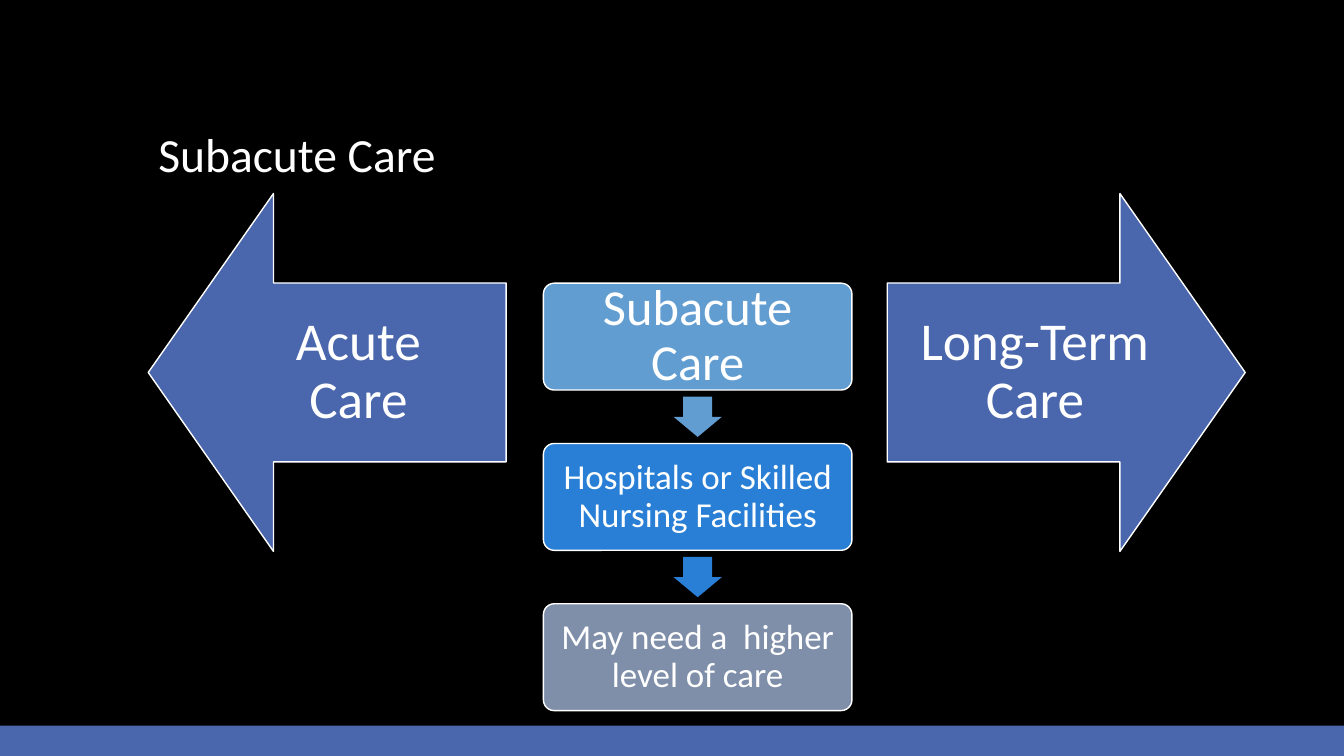
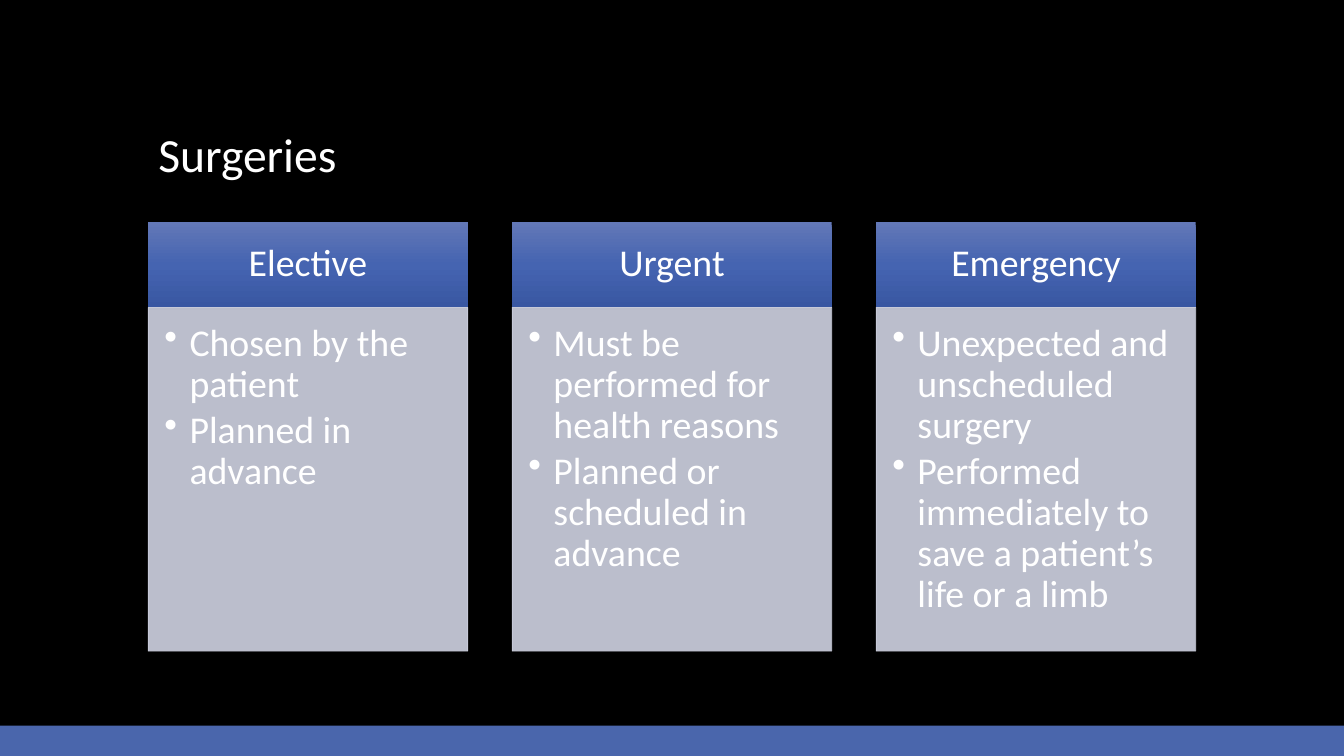
from copy import deepcopy

from lxml.etree import SubElement
from pptx import Presentation
from pptx.dml.color import RGBColor
from pptx.enum.shapes import MSO_SHAPE
from pptx.enum.text import MSO_ANCHOR, MSO_AUTO_SIZE, PP_ALIGN
from pptx.oxml.ns import qn
from pptx.util import Inches, Pt

FONT = "Calibri"
WHITE = "FFFFFF"
BLACK = "000000"
ACCENT = "4A66AC"
PANEL = "D0D3E3"
HEADER_STOPS = ["6378B7", "4564B1", "3957A2"]
SLIDE_WIDTH, SLIDE_HEIGHT = 13.33, 7.5
BAND_HEIGHT = 0.3
TITLE_BOX = (1.47, 0.51, 10.4, 1.35)

SETTINGS = [
    ("Subacute Care", "629DD1", 36, 0.15),
    ("Hospitals or Skilled Nursing Facilities", "297FD5", 25, 0.1),
    ("May need a  higher level of care", "7F8FA9", 25, 0.1),
]
SURGERIES = [
    ("Elective", ["Chosen by the patient", "Planned in advance"]),
    ("Urgent", ["Must be performed for health reasons",
                "Planned or scheduled in advance"]),
    ("Emergency", ["Unexpected and unscheduled surgery",
                   "Performed immediately to save a patient’s life or a limb"]),
]


def color(value):
    """Return the colour for a hex string."""
    return RGBColor.from_string(value)


def add_box(slide, kind, box, fill=None, line=None, line_width=1):
    """Add a flat preset shape in the box, given in inches."""
    shape = slide.shapes.add_shape(kind, *map(Inches, box))
    shape.shadow.inherit = False
    if fill:
        shape.fill.solid()
        shape.fill.fore_color.rgb = color(fill)
    if line:
        shape.line.color.rgb = color(line)
        shape.line.width = Pt(line_width)
    else:
        shape.line.fill.background()
    return shape


def write_text(shape, lines, size, insets, align=PP_ALIGN.CENTER,
               anchor=MSO_ANCHOR.MIDDLE):
    """Write paragraphs in white, with left, top, right and bottom insets."""
    frame = shape.text_frame
    frame.word_wrap = True
    frame.auto_size = MSO_AUTO_SIZE.NONE
    frame.vertical_anchor = anchor
    frame.margin_left, frame.margin_top, frame.margin_right, frame.margin_bottom = map(
        Inches, insets)
    frame.text = "\n".join(lines)
    for paragraph in frame.paragraphs:
        paragraph.alignment = align
        paragraph.line_spacing = 0.9
        for run in paragraph.runs:
            run.font.name = FONT
            run.font.size = Pt(size)
            run.font.color.rgb = color(WHITE)


def add_bullets(shape, indent, gap):
    """Give each paragraph a hanging bullet and a gap in points."""
    for paragraph in shape.text_frame.paragraphs:
        paragraph.space_after = Pt(gap)
        properties = paragraph._p.get_or_add_pPr()
        properties.set("marL", str(Inches(indent)))
        properties.set("indent", str(-Inches(indent)))
        SubElement(properties, qn("a:buChar")).set("char", "•")


def set_opacity(shape, percent):
    """Make the fill and line of the shape partly transparent."""
    for element in shape.element.spPr.iter(qn("a:srgbClr")):
        SubElement(element, qn("a:alpha")).set("val", str(percent * 1000))


def set_gradient(shape, colors):
    """Fill the shape from top to bottom with three evenly spaced colours."""
    shape.fill.gradient()
    shape.fill.gradient_angle = 270
    stop_list = shape.element.spPr.find(".//" + qn("a:gsLst"))
    stop_list.insert(1, deepcopy(stop_list[0]))
    for index, (stop, value) in enumerate(zip(shape.fill.gradient_stops, colors)):
        stop.color.rgb = color(value)
        stop.position = index / (len(colors) - 1)


def add_titled_slide(presentation, title):
    """Add a title-only slide with the shared title style."""
    slide = presentation.slides.add_slide(presentation.slide_layouts[5])
    shape = slide.shapes.title
    shape.left, shape.top, shape.width, shape.height = map(Inches, TITLE_BOX)
    write_text(shape, [title], 34, (0.1, 0.05, 0.1, 0.05), PP_ALIGN.LEFT,
               MSO_ANCHOR.BOTTOM)
    return slide


def style_master(presentation, slide):
    """Give the master a black background and the bottom band."""
    master = presentation.slide_master
    master.background.fill.solid()
    master.background.fill.fore_color.rgb = color(BLACK)
    band = add_box(slide, MSO_SHAPE.RECTANGLE,
                   (0, SLIDE_HEIGHT - BAND_HEIGHT, SLIDE_WIDTH, BAND_HEIGHT), ACCENT)
    master.shapes.element.insert(2, band.element)


def draw_care_arrow(slide, kind, box, text):
    """Draw a large arrow that names a type of care."""
    arrow = add_box(slide, kind, box, ACCENT, WHITE)
    arrow.adjustments[0] = 0.5
    arrow.adjustments[1] = 0.35
    write_text(arrow, [text], 38, (0.3,) * 4)


def draw_steps(slide, box, steps):
    """Stack the steps evenly in the box with small arrows between them."""
    left, top, width, height = box
    step_height, arrow_width, arrow_height = 1.06, 0.48, 0.4
    pitch = (height - step_height) / (len(steps) - 1)
    arrow_left = left + (width - arrow_width) / 2
    arrow_offset = (step_height + pitch - arrow_height) / 2
    for index, (text, fill, size, inset) in enumerate(steps):
        step_top = top + index * pitch
        step = add_box(slide, MSO_SHAPE.ROUNDED_RECTANGLE,
                       (left, step_top, width, step_height), fill, WHITE)
        step.adjustments[0] = 0.1
        write_text(step, [text], size, (inset,) * 4)
        if index < len(steps) - 1:
            arrow = add_box(slide, MSO_SHAPE.DOWN_ARROW,
                            (arrow_left, step_top + arrow_offset,
                             arrow_width, arrow_height), fill)
            arrow.adjustments[0] = 0.6
            arrow.adjustments[1] = 0.5


def draw_surgery(slide, box, name, points):
    """Draw a column with a header and a bulleted panel."""
    left, top, width, height = box
    header_height = 0.85
    header = add_box(slide, MSO_SHAPE.RECTANGLE, (left, top, width, header_height))
    set_gradient(header, HEADER_STOPS)
    write_text(header, [name], 27, (0.21, 0.12, 0.21, 0.12))
    panel = add_box(slide, MSO_SHAPE.RECTANGLE,
                    (left, top + header_height, width, height - header_height),
                    PANEL, PANEL, 0.5)
    set_opacity(panel, 90)
    write_text(panel, points, 27, (0.16, 0.16, 0.21, 0.24), PP_ALIGN.LEFT,
               MSO_ANCHOR.TOP)
    add_bullets(panel, 0.25, 4)


def build_subacute_care(presentation):
    """Build the slide on subacute care."""
    slide = add_titled_slide(presentation, "Subacute Care")
    draw_care_arrow(slide, MSO_SHAPE.LEFT_ARROW, (1.47, 1.92, 3.55, 3.55), "Acute Care")
    draw_care_arrow(slide, MSO_SHAPE.RIGHT_ARROW, (8.8, 1.92, 3.55, 3.55),
                    "Long-Term Care")
    draw_steps(slide, (5.39, 2.81, 3.06, 4.24), SETTINGS)
    return slide


def build_surgeries(presentation):
    """Build the slide on types of surgery."""
    slide = add_titled_slide(presentation, "Surgeries")
    left, top, width, height, gap = 1.47, 2.2, 3.17, 4.26, 0.44
    for index, (name, points) in enumerate(SURGERIES):
        box = (left + index * (width + gap), top, width, height)
        draw_surgery(slide, box, name, points)


def main():
    """Build and save the presentation."""
    presentation = Presentation()
    presentation.slide_width = Inches(SLIDE_WIDTH)
    presentation.slide_height = Inches(SLIDE_HEIGHT)
    first_slide = build_subacute_care(presentation)
    build_surgeries(presentation)
    style_master(presentation, first_slide)
    presentation.save("out.pptx")


if __name__ == "__main__":
    main()
